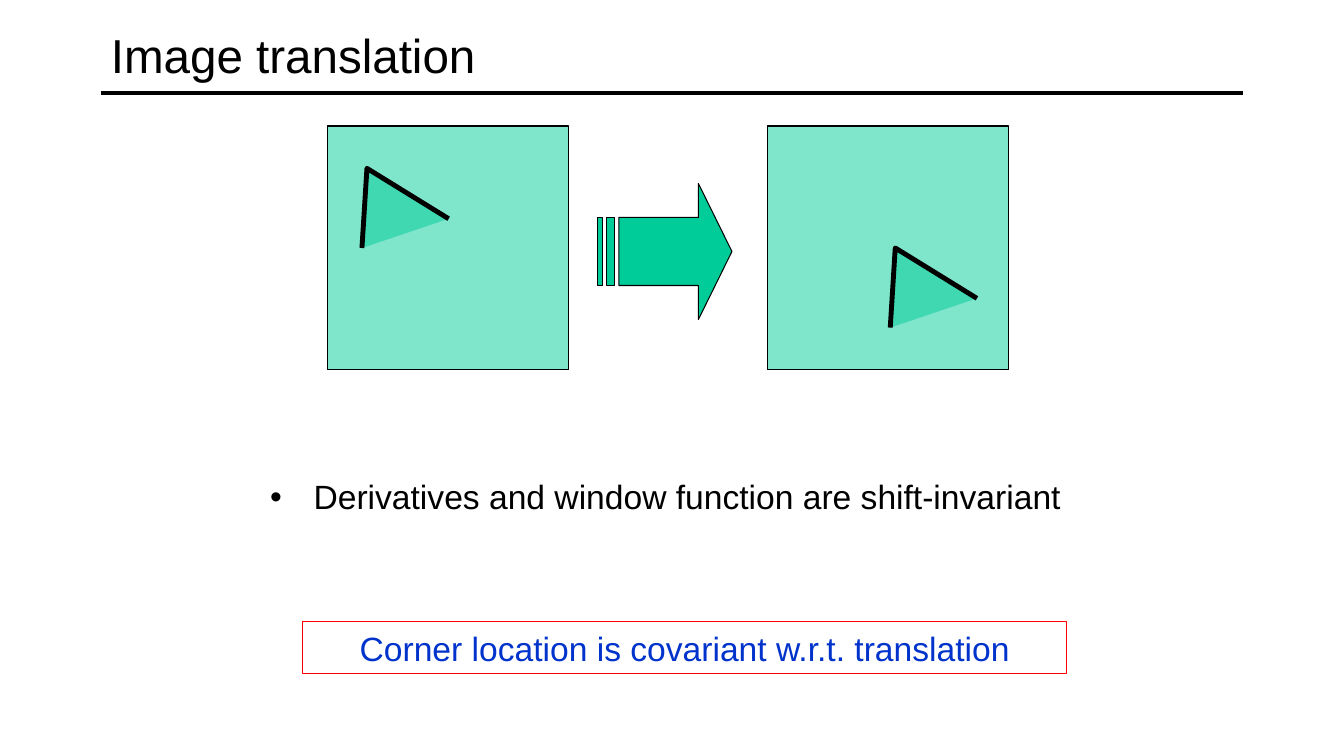
from lxml.etree import SubElement
from pptx import Presentation
from pptx.dml.color import RGBColor
from pptx.enum.shapes import MSO_CONNECTOR, MSO_SHAPE
from pptx.enum.text import MSO_ANCHOR, MSO_AUTO_SIZE, PP_ALIGN
from pptx.oxml.ns import qn
from pptx.util import Inches, Pt

TITLE = "Image translation"
POINT = "Derivatives and window function are shift-invariant"
CLAIM = "Corner location is covariant w.r.t. translation"
BLACK, GREEN, RED, BLUE = "000000", "00CC99", "FF0000", "0033CC"
FRAMES = [(3.25, (3.59, 1.67)), (7.61, (8.83, 2.46))]
TOP, WIDE, HIGH = 1.25, 2.39, 2.42
CORNER = [(0, 0.79), (0.05, 0), (0.86, 0.5)]
INDENT = 0.43


def color(code):
    return RGBColor.from_string(code)


def paint(shape, fill=None, line=BLACK, width=0.75, alpha=None):
    shape.shadow.inherit = False
    if fill:
        shape.fill.solid()
        shape.fill.fore_color.rgb = color(fill)
    else:
        shape.fill.background()
    if alpha:
        tint = shape.fill._xPr.find(qn("a:solidFill"))[0]
        SubElement(tint, qn("a:alpha"), val=str(alpha * 1000))
    shape.line.color.rgb = color(line)
    shape.line.width = Pt(width)


def place(shape, left, top, width, height):
    shape.left, shape.top = Inches(left), Inches(top)
    shape.width, shape.height = Inches(width), Inches(height)


def write(shape, text, size=24, tone=BLACK, align=PP_ALIGN.LEFT, bullet=None):
    frame = shape.text_frame
    frame.word_wrap = True
    frame.auto_size = MSO_AUTO_SIZE.NONE
    frame.vertical_anchor = MSO_ANCHOR.MIDDLE
    frame.text = text
    para = frame.paragraphs[0]
    if bullet:
        props = para._p.get_or_add_pPr()
        props.set("marL", str(Inches(INDENT)))
        props.set("indent", str(-Inches(INDENT)))
        SubElement(props, qn("a:buChar"), char=bullet)
    para.alignment = align
    para.space_before = Pt(0)
    font = para.runs[0].font
    font.name, font.size = "Arial", Pt(size)
    font.color.rgb = color(tone)


def main():
    deck = Presentation()
    deck.slide_width, deck.slide_height = Inches(13.33), Inches(7.5)
    slide = deck.slides.add_slide(deck.slide_layouts[1])
    shapes = slide.shapes

    rule = shapes.add_connector(
        MSO_CONNECTOR.STRAIGHT, Inches(1), Inches(0.92), Inches(12.33), Inches(0.92))
    rule.line.color.rgb = color(BLACK)
    rule.line.width = Pt(3)
    SubElement(rule._element.spPr, qn("a:effectLst"))

    place(shapes.title, 1, 0.08, 11.33, 0.92)
    write(shapes.title, TITLE, size=34)
    body = slide.placeholders[1]
    place(body, 2.58, 4.67, 8.42, 0.51)
    write(body, POINT, bullet="•")

    def add(kind, left, top, width, height, **look):
        shape = shapes.add_shape(
            kind, Inches(left), Inches(top), Inches(width), Inches(height))
        paint(shape, **look)
        return shape

    for left, (x, y) in FRAMES:
        add(MSO_SHAPE.RECTANGLE, left, TOP, WIDE, HIGH, fill=GREEN, alpha=50)
        spots = [(Inches(x + dx), Inches(y + dy)) for dx, dy in CORNER]
        pen = shapes.build_freeform(*spots[0])
        pen.add_line_segments(spots[1:], close=False)
        paint(pen.convert_to_shape(), fill=GREEN, width=3.5, alpha=50)

    arrow = add(MSO_SHAPE.STRIPED_RIGHT_ARROW, 5.93, 1.82, 1.33, 1.35, fill=GREEN)
    arrow.adjustments[0], arrow.adjustments[1] = 0.5, 0.25
    claim = add(MSO_SHAPE.RECTANGLE, 3, 6.17, 7.58, 0.51, line=RED)
    write(claim, CLAIM, tone=BLUE, align=PP_ALIGN.CENTER)
    deck.save("out.pptx")


if __name__ == "__main__":
    main()
